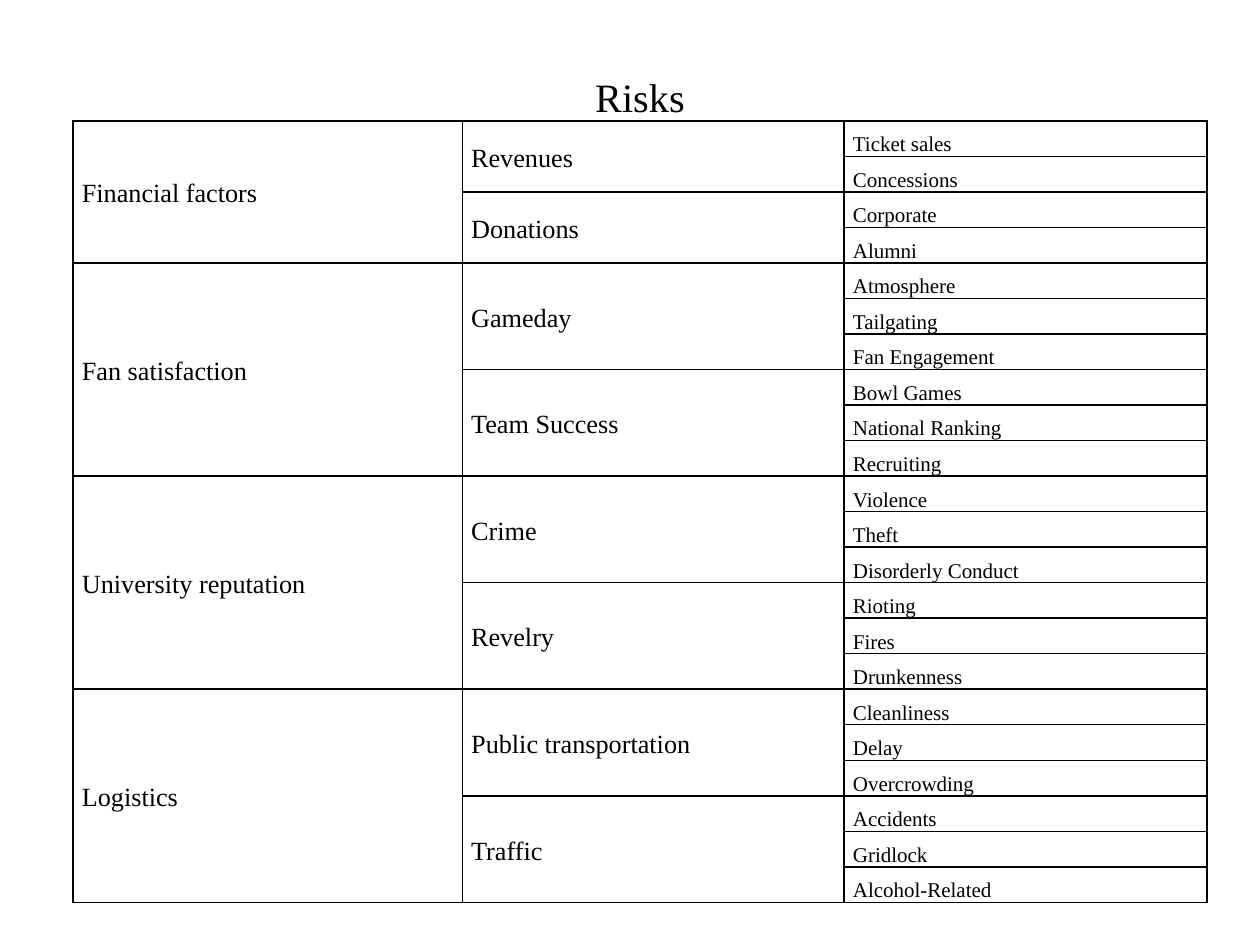
from lxml import etree
from pptx import Presentation
from pptx.dml.color import RGBColor
from pptx.enum import text
from pptx.oxml.ns import qn
from pptx.util import Inches, Pt

RISKS = {
    "Financial factors": {
        "Revenues": ["Ticket sales", "Concessions"],
        "Donations": ["Corporate", "Alumni"],
    },
    "Fan satisfaction": {
        "Gameday": ["Atmosphere", "Tailgating", "Fan Engagement"],
        "Team Success": ["Bowl Games", "National Ranking", "Recruiting"],
    },
    "University reputation": {
        "Crime": ["Violence", "Theft", "Disorderly Conduct"],
        "Revelry": ["Rioting", "Fires", "Drunkenness"],
    },
    "Logistics": {
        "Public transportation": ["Cleanliness", "Delay", "Overcrowding"],
        "Traffic": ["Accidents", "Gridlock", "Alcohol-Related"],
    },
}
LEFT, TOP, HEIGHT, HEAD = 0.58, 0.42, 6.75, 0.54
WIDTHS = [3.09, 3.03, 2.88]


def color(code):
    return RGBColor.from_string(code)


class Deck:
    font = "Times New Roman"
    ink = "000000"
    line = 1
    pad = {"margin_left": Inches(0.07), "margin_right": Inches(0.07),
           "margin_top": 0, "margin_bottom": 0}

    def __init__(self, slide):
        self.slide = slide

    def table(self, count):
        frame = self.slide.shapes.add_table(
            count + 1, len(WIDTHS), Inches(LEFT), Inches(TOP),
            Inches(sum(WIDTHS)), Inches(HEIGHT))
        grid = frame.table
        grid.first_row = grid.horz_banding = False
        for col, width in zip(grid.columns, WIDTHS):
            col.width = Inches(width)
        for num, row in enumerate(grid.rows):
            row.height = Inches((HEIGHT - HEAD) / count if num else HEAD)
            for cell in row.cells:
                cell.fill.background()
                self.border(cell, "LRTB" if num else "B")
        return grid

    def border(self, cell, sides):
        props = cell._tc.get_or_add_tcPr()
        for place, side in enumerate("LRTB"):
            edge = etree.Element(qn(f"a:ln{side}"), w=str(Pt(self.line)))
            if side in sides:
                fill = etree.SubElement(edge, qn("a:solidFill"))
                etree.SubElement(fill, qn("a:srgbClr"), val=self.ink)
            else:
                etree.SubElement(edge, qn("a:noFill"))
            props.insert(place, edge)

    def cell(self, cell, words, size, anchor, align=text.PP_ALIGN.LEFT):
        for name, value in {**self.pad, "vertical_anchor": anchor}.items():
            setattr(cell, name, value)
        para = cell.text_frame.paragraphs[0]
        para.alignment, para.line_spacing = align, 1.15
        run = para.add_run()
        run.text = words
        look = {"name": self.font, "size": Pt(size), "bold": False}
        for name, value in look.items():
            setattr(run.font, name, value)
        run.font.color.rgb = color(self.ink)

    def group(self, grid, row, col, count, words):
        first = grid.cell(row, col)
        first.merge(grid.cell(row + count - 1, col))
        self.cell(first, words, 15, text.MSO_ANCHOR.MIDDLE)


def main():
    prs = Presentation()
    prs.slide_width, prs.slide_height = Inches(10), Inches(7.5)
    deck = Deck(prs.slides.add_slide(prs.slide_layouts[6]))

    # Grid with one row per single risk
    count = sum(len(items) for kinds in RISKS.values()
                for items in kinds.values())
    grid = deck.table(count)

    # Title row
    head = grid.cell(0, 0)
    head.merge(grid.cell(0, 2))
    deck.cell(head, "Risks", 23, text.MSO_ANCHOR.BOTTOM, text.PP_ALIGN.CENTER)

    # Areas, kinds and single risks
    row = 1
    for area, kinds in RISKS.items():
        deck.group(grid, row, 0, sum(map(len, kinds.values())), area)
        for kind, items in kinds.items():
            deck.group(grid, row, 1, len(items), kind)
            for item in items:
                deck.cell(grid.cell(row, 2), item, 12, text.MSO_ANCHOR.BOTTOM)
                row += 1

    prs.save("out.pptx")


if __name__ == "__main__":
    main()
